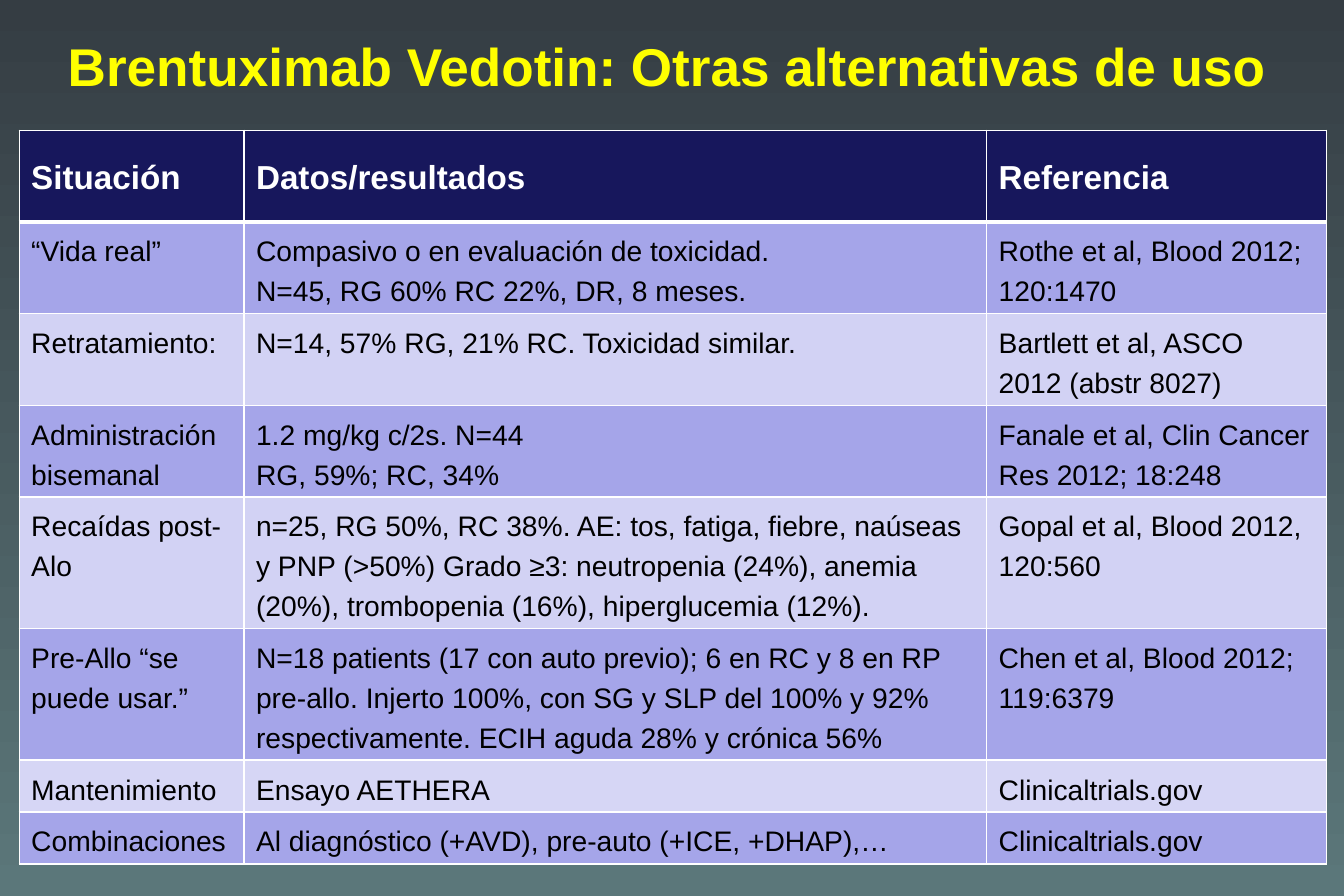
from dataclasses import dataclass

from lxml.etree import SubElement
from pptx import Presentation
from pptx.dml.color import RGBColor
from pptx.enum.text import MSO_ANCHOR, PP_ALIGN
from pptx.oxml import parse_xml
from pptx.oxml.ns import nsdecls, qn
from pptx.slide import Slide
from pptx.table import _Cell
from pptx.text.text import TextFrame
from pptx.util import Cm, Pt


@dataclass(frozen=True)
class Theme:
    """Colours and type sizes of the slide."""
    font: str = "Arial"
    background: tuple[str, str] = ("353D43", "5B777A")
    title: str = "FFFF00"
    header: str = "17175C"
    light: str = "FFFFFF"
    dark: str = "000000"
    band: str = "A5A5E9"
    pale_band: str = "D2D2F4"
    last_pale_band: str = "D6D6F5"
    title_size: int = 32
    header_size: int = 20
    body_size: int = 17
    line_spacing: int = 24
    border: int = 1
    header_border: int = 3


@dataclass(frozen=True)
class Row:
    """One table row: its height in centimetres, fill and cell texts."""
    height: float
    fill: str
    texts: tuple[str, str, str]


THEME = Theme()
ONE_LINE, TWO_LINES, THREE_LINES = 1.1, 1.95, 2.79
COLUMN_WIDTHS = (4.78, 15.79, 7.22)
HEADER = Row(TWO_LINES, THEME.header, ("Situación", "Datos/resultados", "Referencia"))
BODY = (
    Row(TWO_LINES, THEME.band, (
        "“Vida real”",
        "Compasivo o en evaluación de toxicidad.\nN=45, RG 60% RC 22%, DR, 8 meses.",
        "Rothe et al, Blood 2012; 120:1470")),
    Row(TWO_LINES, THEME.pale_band, (
        "Retratamiento:",
        "N=14, 57% RG, 21% RC. Toxicidad similar.",
        "Bartlett et al, ASCO 2012 (abstr 8027)")),
    Row(TWO_LINES, THEME.band, (
        "Administración bisemanal",
        "1.2 mg/kg c/2s. N=44\nRG, 59%; RC, 34%",
        "Fanale et al, Clin Cancer Res 2012; 18:248")),
    Row(THREE_LINES, THEME.pale_band, (
        "Recaídas post-Alo",
        "n=25, RG 50%, RC 38%. AE: tos, fatiga, fiebre, naúseas y PNP (>50%) "
        "Grado ≥3: neutropenia (24%), anemia (20%), trombopenia (16%), "
        "hiperglucemia (12%).",
        "Gopal et al, Blood 2012, 120:560")),
    Row(THREE_LINES, THEME.band, (
        "Pre-Allo “se puede usar.”",
        "N=18 patients (17 con auto previo); 6 en RC y 8 en RP pre-allo. "
        "Injerto 100%, con SG y SLP del 100% y 92% respectivamente. "
        "ECIH aguda 28% y crónica 56%",
        "Chen et al, Blood 2012; 119:6379")),
    Row(ONE_LINE, THEME.last_pale_band, (
        "Mantenimiento", "Ensayo AETHERA", "Clinicaltrials.gov")),
    Row(ONE_LINE, THEME.band, (
        "Combinaciones",
        "Al diagnóstico (+AVD), pre-auto (+ICE, +DHAP),…",
        "Clinicaltrials.gov")),
)


def write_text(frame: TextFrame, text: str, size: int, color: str, bold: bool,
               **paragraph_format: object) -> None:
    """Write one formatted paragraph for each line of the text."""
    frame.text = text
    font_format = {"name": THEME.font, "size": Pt(size), "bold": bold}
    for paragraph in frame.paragraphs:
        for name, value in paragraph_format.items():
            setattr(paragraph, name, value)
        for run in paragraph.runs:
            for name, value in font_format.items():
                setattr(run.font, name, value)
            run.font.color.rgb = RGBColor.from_string(color)


def set_borders(cell: _Cell, top: int, bottom: int) -> None:
    """Draw light borders on the four sides of a cell."""
    properties = cell._tc.get_or_add_tcPr()
    widths = {"lnL": THEME.border, "lnR": THEME.border, "lnT": top, "lnB": bottom}
    for position, (side, width) in enumerate(widths.items()):
        line = parse_xml(f'<a:{side} {nsdecls("a")} w="{Pt(width)}"/>')
        fill = SubElement(line, qn("a:solidFill"))
        SubElement(fill, qn("a:srgbClr"), val=THEME.light)
        properties.insert(position, line)


def add_background(slide: Slide) -> None:
    """Shade the slide from top to bottom."""
    fill = slide.background.fill
    fill.gradient()
    fill.gradient_angle = 270
    for stop, color in zip(fill.gradient_stops, THEME.background):
        stop.color.rgb = RGBColor.from_string(color)
    for stop, position in zip(fill.gradient_stops, (0, 1)):
        stop.position = position


def add_title(slide: Slide, text: str) -> None:
    """Add the centred slide title."""
    frame = slide.shapes.add_textbox(Cm(0.79), Cm(0.33), Cm(26.8), Cm(2.13)).text_frame
    frame.word_wrap = True
    frame.vertical_anchor = MSO_ANCHOR.MIDDLE
    write_text(frame, text, THEME.title_size, THEME.title, True, alignment=PP_ALIGN.CENTER)


def add_results_table(slide: Slide) -> None:
    """Add the table of situations, results and references."""
    rows = (HEADER, *BODY)
    table = slide.shapes.add_table(
        len(rows), len(COLUMN_WIDTHS), Cm(0.41), Cm(2.77),
        Cm(sum(COLUMN_WIDTHS)), Cm(sum(row.height for row in rows))).table
    for column, width in zip(table.columns, COLUMN_WIDTHS):
        column.width = Cm(width)
    for index, row in enumerate(rows):
        table.rows[index].height = Cm(row.height)
        is_header = row is HEADER
        size, color = ((THEME.header_size, THEME.light) if is_header
                       else (THEME.body_size, THEME.dark))
        for cell, text in zip(table.rows[index].cells, row.texts):
            cell.vertical_anchor = MSO_ANCHOR.MIDDLE if is_header else MSO_ANCHOR.TOP
            cell.fill.solid()
            cell.fill.fore_color.rgb = RGBColor.from_string(row.fill)
            write_text(cell.text_frame, text, size, color, is_header,
                       line_spacing=Pt(THEME.line_spacing))
            set_borders(cell,
                        top=THEME.header_border if index == 1 else THEME.border,
                        bottom=THEME.header_border if is_header else THEME.border)


def main() -> None:
    """Build and save the presentation."""
    presentation = Presentation()
    presentation.slide_width, presentation.slide_height = Cm(28.575), Cm(19.05)
    slide = presentation.slides.add_slide(presentation.slide_layouts[6])
    add_background(slide)
    add_title(slide, "Brentuximab Vedotin: Otras alternativas de uso")
    add_results_table(slide)
    presentation.save("out.pptx")


if __name__ == "__main__":
    main()
